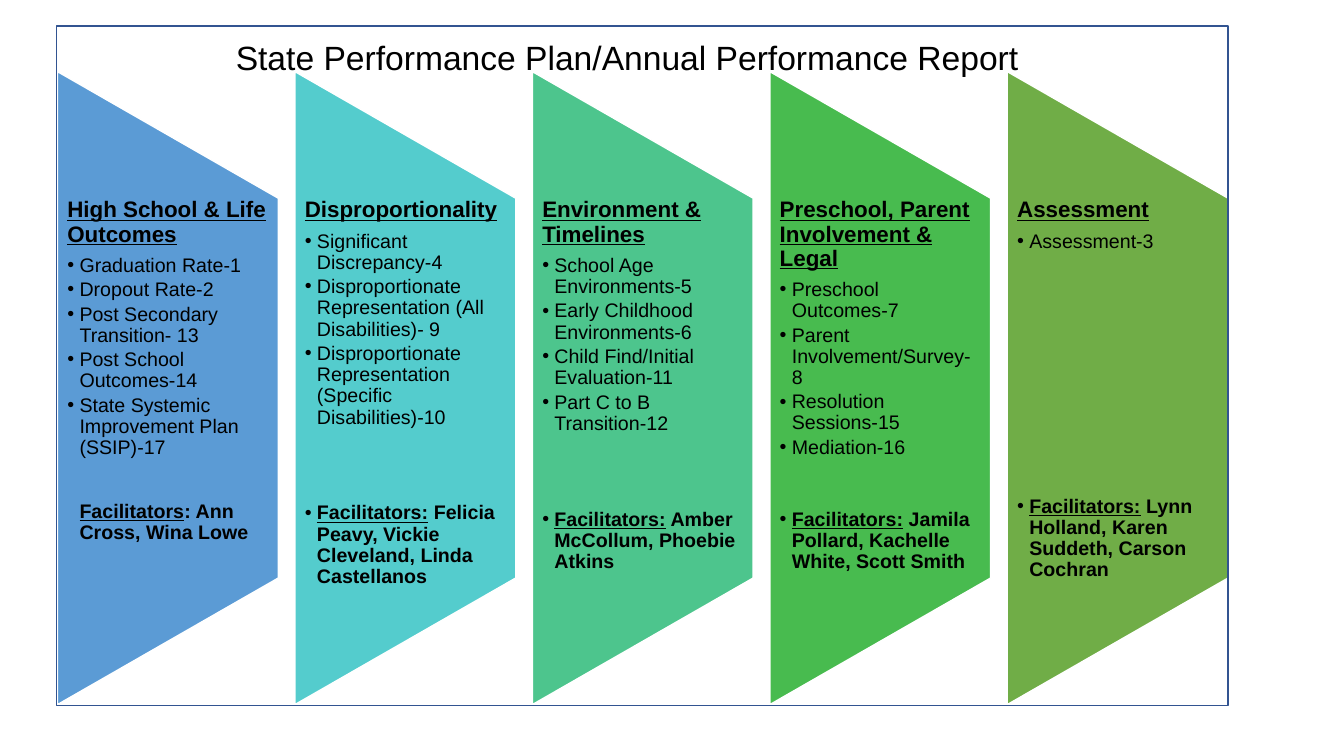
from lxml.etree import SubElement
from pptx import Presentation
from pptx.dml.color import RGBColor
from pptx.enum.shapes import MSO_SHAPE
from pptx.enum.text import MSO_ANCHOR
from pptx.oxml.ns import qn
from pptx.util import Inches, Pt

BLACK = RGBColor(0x00, 0x00, 0x00)
WHITE = RGBColor(0xFF, 0xFF, 0xFF)
NAVY = RGBColor(0x32, 0x54, 0x91)
BLUE = RGBColor(0x5B, 0x9B, 0xD5)
TURQUOISE = RGBColor(0x54, 0xCC, 0xCD)
SEA_GREEN = RGBColor(0x4D, 0xC5, 0x8D)
GREEN = RGBColor(0x48, 0xBB, 0x4F)
OLIVE = RGBColor(0x70, 0xAD, 0x47)

TITLE = "State Performance Plan/Annual Performance Report"
HEADING = {"size": Pt(16), "bold": True, "underline": True}
INDICATOR = {"size": Pt(14), "bold": False, "underline": False}
LABEL = {"size": Pt(14), "bold": True, "underline": True}
NAMES = {"size": Pt(14), "bold": True, "underline": False}

TEAMS = [
    (BLUE, "High School & Life Outcomes",
     ["Graduation Rate-1", "Dropout Rate-2", "Post Secondary Transition- 13",
      "Post School Outcomes-14", "State Systemic Improvement Plan (SSIP)-17"],
     ("Facilitators", ": Ann Cross, Wina Lowe"), 28, False),
    (TURQUOISE, "Disproportionality",
     ["Significant Discrepancy-4",
      "Disproportionate Representation (All Disabilities)- 9",
      "Disproportionate Representation (Specific Disabilities)-10"],
     ("Facilitators:", " Felicia Peavy, Vickie Cleveland, Linda Castellanos"), 51, True),
    (SEA_GREEN, "Environment & Timelines",
     ["School Age Environments-5", "Early Childhood Environments-6",
      "Child Find/Initial Evaluation-11", "Part C to B Transition-12"],
     ("Facilitators:", " Amber McCollum, Phoebie Atkins"), 51, True),
    (GREEN, "Preschool, Parent Involvement & Legal",
     ["Preschool Outcomes-7", "Parent Involvement/Survey-8",
      "Resolution Sessions-15", "Mediation-16"],
     ("Facilitators:", " Jamila Pollard, Kachelle White, Scott Smith"), 34, True),
    (OLIVE, "Assessment", ["Assessment-3"],
     ("Facilitators:", " Lynn Holland, Karen Suddeth, Carson Cochran"), 172, True),
]


class PlanSlide:
    """Holds the slide, its column grid and its text style."""

    font = "Arial"
    first_left, last_left, column_width = 0.57, 9.99, 2.19
    banner_top, banner_height = 0.71, 6.28
    text_top, text_height = 1.97, 3.77

    def __init__(self, deck, column_count):
        self.slide = deck.slides.add_slide(deck.slide_layouts[6])
        self.pitch = (self.last_left - self.first_left) / (column_count - 1)

    def column_left(self, column):
        return self.first_left + column * self.pitch

    def outline(self, kind, box, line_color, fill_color=None):
        shape = self.slide.shapes.add_shape(kind, *map(Inches, box))
        shape.shadow.inherit = False
        if fill_color is None:
            shape.fill.background()
        else:
            shape.fill.solid()
            shape.fill.fore_color.rgb = fill_color
        shape.line.color.rgb = line_color
        shape.line.width = Pt(1)
        return shape

    def banner(self, column, color):
        center_x = self.column_left(column) + self.column_width / 2
        center_y = self.banner_top + self.banner_height / 2
        box = (center_x - self.banner_height / 2, center_y - self.column_width / 2,
               self.banner_height, self.column_width)
        shape = self.outline(MSO_SHAPE.FLOWCHART_MANUAL_OPERATION, box, WHITE, color)
        shape.rotation = 270

    def text_frame(self, box, **settings):
        frame = self.slide.shapes.add_textbox(*map(Inches, box)).text_frame
        for name, value in {"word_wrap": True, **settings}.items():
            setattr(frame, name, value)
        return frame

    def fill_paragraph(self, paragraph, runs, **spacing):
        for name, value in {"line_spacing": 0.9, **spacing}.items():
            setattr(paragraph, name, value)
        for words, style in runs:
            run = paragraph.add_run()
            run.text = words
            for name, value in {"name": self.font, **style}.items():
                setattr(run.font, name, value)
            run.font.color.rgb = BLACK

    def item(self, frame, runs, bulleted=True, gap=0):
        paragraph = frame.add_paragraph()
        self.fill_paragraph(paragraph, runs, level=1, space_before=Pt(gap),
                            space_after=Pt(2.3))
        properties = paragraph._p.get_or_add_pPr()
        properties.set("marL", str(Inches(0.12)))
        properties.set("indent", str(Inches(-0.12) if bulleted else 0))
        if bulleted:
            SubElement(properties, qn("a:buFont")).set("typeface", self.font)
            SubElement(properties, qn("a:buChar")).set("char", "•")

    def team(self, column, heading, indicators, facilitators, gap, bulleted):
        box = (self.column_left(column), self.text_top, self.column_width, self.text_height)
        frame = self.text_frame(box, margin_top=0, margin_bottom=0)
        self.fill_paragraph(frame.paragraphs[0], [(heading, HEADING)], space_after=Pt(6))
        for indicator in indicators:
            self.item(frame, [(indicator, INDICATOR)])
        self.item(frame, zip(facilitators, (LABEL, NAMES)), bulleted, gap)

    def title(self, words):
        frame = self.text_frame((2.24, 0.34, 8.85, 0.5), vertical_anchor=MSO_ANCHOR.MIDDLE)
        self.fill_paragraph(frame.paragraphs[0], [(words, {"size": Pt(24)})])


def main():
    deck = Presentation()
    deck.slide_width, deck.slide_height = Inches(13.33), Inches(7.5)
    plan = PlanSlide(deck, len(TEAMS))
    for column, (color, *content) in enumerate(TEAMS):
        plan.banner(column, color)
        plan.team(column, *content)
    plan.outline(MSO_SHAPE.RECTANGLE, (0.56, 0.26, 11.62, 6.74), NAVY)
    plan.title(TITLE)
    deck.save("out.pptx")


if __name__ == "__main__":
    main()
